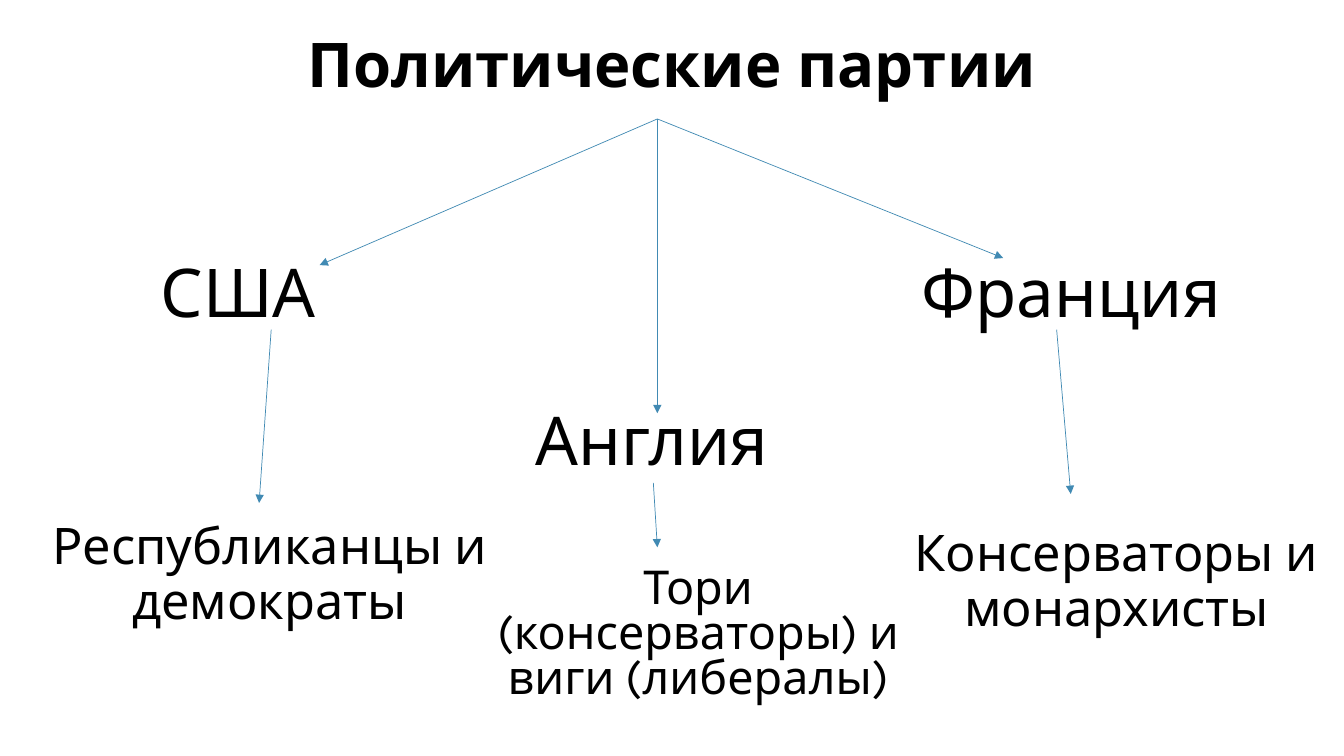
from lxml import etree
from pptx import Presentation
from pptx import util as u
from pptx.dml.color import RGBColor
from pptx.enum import shapes, text
from pptx.oxml.ns import qn

BLACK = RGBColor(0, 0, 0)
BLUE = RGBColor(0x41, 0x8A, 0xB3)
WHITE = RGBColor(255, 255, 255)
FONT = "Karla"
WIDTH, HEIGHT = 13.33, 7.5
TITLE_H = 0.18 * HEIGHT
COUNTRY_W, PARTIES_W, LABEL_H = 5.67, 4.77, 1.46
ROOT = (6.52, 1.18)

# Country, its box corner, end of the arrow from the title,
# arrow to the parties, parties, their box corner, text format
BRANCHES = [
    ("США", (-0.47, 2.2), (3.17, 2.63), ((2.69, 3.27), (2.57, 4.99)),
     "Республиканцы и демократы", (0.29, 4.98), {"size": 36}),
    ("Англия", (3.63, 3.67), (6.52, 4.1), ((6.48, 4.79), (6.52, 5.43)),
     "Тори (консерваторы) и виги (либералы)", (4.54, 5.58),
     {"size": 33.3, "spacing": 0.8}),
    ("Франция", (7.79, 2.2), (9.95, 2.56), ((10.48, 3.27), (10.62, 4.9)),
     "Консерваторы и монархисты", (8.69, 5.05), {"size": 36}),
]


def write(sp, box, words, size, bold=False, spacing=0.9):
    """Place a text shape in box and fill it with one centred paragraph."""
    sp.left, sp.top, sp.width, sp.height = (u.Inches(v) for v in box)
    tf = sp.text_frame
    tf.word_wrap = True
    tf.auto_size = text.MSO_AUTO_SIZE.NONE
    tf.vertical_anchor = text.MSO_ANCHOR.MIDDLE
    p = tf.paragraphs[0]
    pPr = p._p.get_or_add_pPr()
    pPr.set("marL", "0")
    pPr.set("indent", "0")
    etree.SubElement(pPr, qn("a:buNone"))
    p.alignment = text.PP_ALIGN.CENTER
    p.line_spacing = spacing
    p.space_before = u.Pt(0)
    r = p.add_run()
    r.text = words
    r.font.name = FONT
    r.font.size = u.Pt(size)
    r.font.bold = bold
    r.font.color.rgb = BLACK


def add_arrow(slide, start, end):
    line = slide.shapes.add_connector(
        shapes.MSO_CONNECTOR.STRAIGHT, *(u.Inches(v) for v in start + end))
    line.line.color.rgb = BLUE
    line.line.width = u.Pt(0.5)
    etree.SubElement(line.line._get_or_add_ln(), qn("a:tailEnd"), type="triangle")
    etree.SubElement(line._element.spPr, qn("a:effectLst"))


def add_branch(slide, branch, country_sp=None):
    """Draw a country, its parties and the arrows leading to both."""
    country, country_at, country_tip, link, parties, parties_at, style = branch
    sp = country_sp or slide.shapes.add_textbox(0, 0, 0, 0)
    write(sp, (*country_at, COUNTRY_W, LABEL_H), country, 48)
    add_arrow(slide, ROOT, country_tip)
    add_arrow(slide, *link)
    write(slide.shapes.add_textbox(0, 0, 0, 0),
          (*parties_at, PARTIES_W, LABEL_H), parties, **style)


def main():
    prs = Presentation()
    prs.slide_width, prs.slide_height = u.Inches(WIDTH), u.Inches(HEIGHT)
    slide = prs.slides.add_slide(prs.slide_layouts[1])
    slide.background.fill.solid()
    slide.background.fill.fore_color.rgb = WHITE
    write(slide.shapes.title, (0, 0, WIDTH, TITLE_H),
          "Политические партии", 44, bold=True)
    country_holders = [slide.placeholders[1], None, None]
    for branch, holder in zip(BRANCHES, country_holders):
        add_branch(slide, branch, holder)
    prs.save("out.pptx")


if __name__ == "__main__":
    main()
